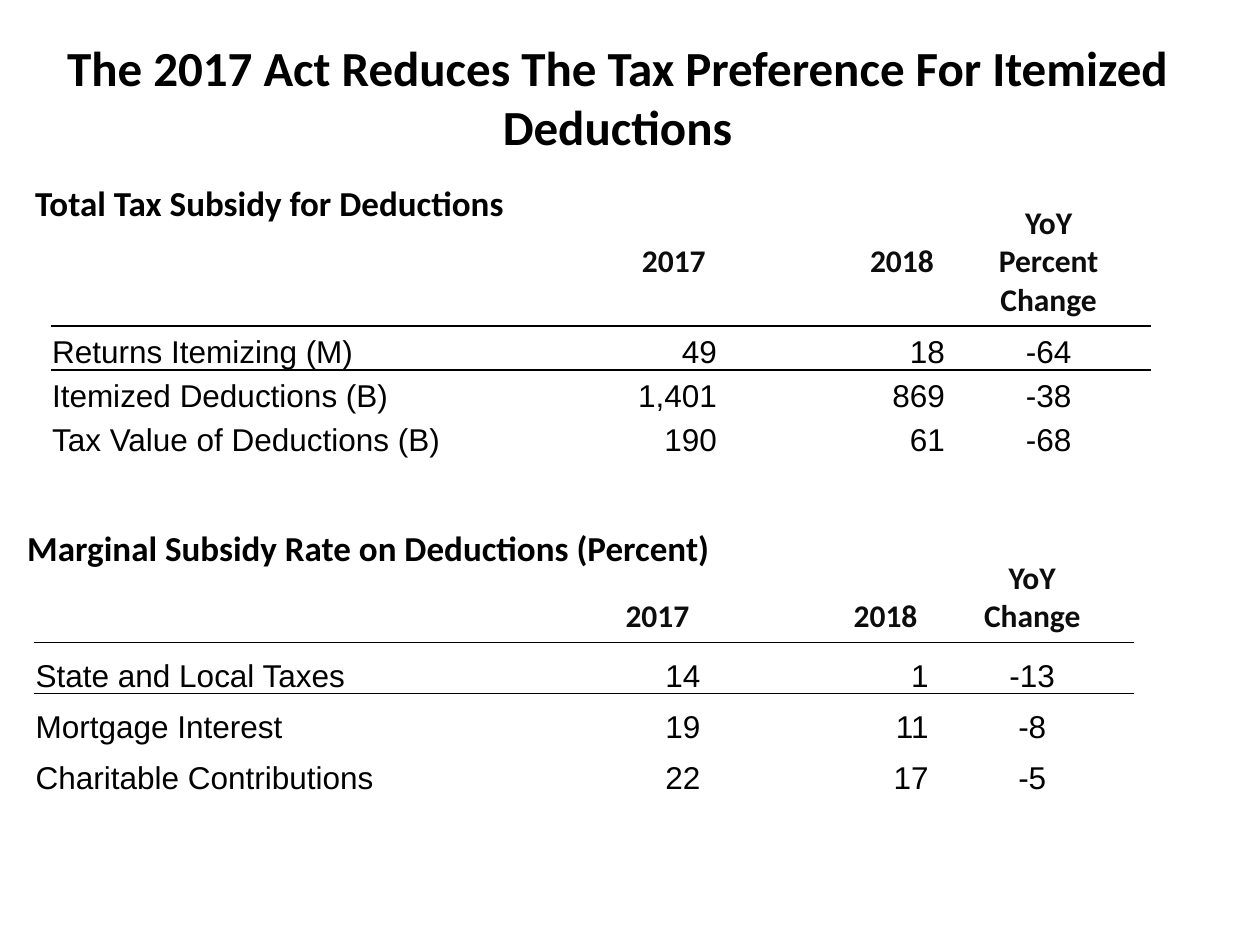
"""Build a slide with two tables on the tax preference for itemized deductions."""
from dataclasses import dataclass

from lxml.etree import SubElement, Element
from pptx import Presentation
from pptx.dml.color import RGBColor
from pptx.enum.text import MSO_ANCHOR as ANCHOR, MSO_AUTO_SIZE as AUTOSIZE, PP_ALIGN as ALIGN
from pptx.oxml.ns import qn
from pptx.util import Cm, Pt


@dataclass(frozen=True)
class Theme:
    heading_font: str = "Calibri"
    body_font: str = "Arial"
    text: str = "000000"
    header: str = "0D0D0D"
    white: str = "FFFFFF"
    title_size: int = 28
    heading_size: int = 20
    table_size: int = 18
    rule_width: int = 1


THEME = Theme()
NO_GRID_STYLE = "{2D5ABB26-0587-4C30-8999-92F81FD0307C}"
COLUMN_WIDTHS = (8.48, 4.98, 4.6, 4.12)
COLUMN_ALIGNS = (ALIGN.LEFT, ALIGN.RIGHT, ALIGN.RIGHT, ALIGN.CENTER)

SUBSIDY_ROWS = (
    ("Returns Itemizing (M)", "49", "18", "-64"),
    ("Itemized Deductions (B)", "1,401", "869", "-38"),
    ("Tax Value of Deductions (B)", "190", "61", "-68"),
)
RATE_ROWS = (
    ("State and Local Taxes", "14", "1", "-13"),
    ("Mortgage Interest", "19", "11", "-8"),
    ("Charitable Contributions", "22", "17", "-5"),
)


def write(tf, text, size, align=ALIGN.LEFT, font=THEME.heading_font, color=THEME.text, bold=True):
    """Write each line of text as one formatted paragraph."""
    for i, line in enumerate(text.split("\n")):
        p = tf.add_paragraph() if i else tf.paragraphs[0]
        p.alignment = align
        r = p.add_run()
        r.text = line
        r.font.name, r.font.size, r.font.bold = font, Pt(size), bold
        r.font.color.rgb = RGBColor.from_string(color)


def set_title(s, text):
    """Place and format the title placeholder."""
    sp = s.shapes.title
    sp.left, sp.top, sp.width, sp.height = Cm(0), Cm(0), Cm(25.4), Cm(3.39)
    tf = sp.text_frame
    tf.word_wrap, tf.auto_size = True, AUTOSIZE.NONE
    tf.vertical_anchor = ANCHOR.MIDDLE
    tf.margin_left, tf.margin_top = Cm(0.76), Cm(0.76)
    tf.margin_right, tf.margin_bottom = Cm(1.27), Cm(0.25)
    write(tf, text, THEME.title_size, ALIGN.CENTER)


def add_heading(s, left, top, text):
    """Add the heading above a table."""
    tf = s.shapes.add_textbox(Cm(left), Cm(top), Cm(19.38), Cm(1.11)).text_frame
    tf.word_wrap, tf.auto_size = True, AUTOSIZE.SHAPE_TO_FIT_TEXT
    write(tf, text, THEME.heading_size)


def add_rule(cell, side):
    """Draw a border on one side of a cell, lnT or lnB."""
    ln = Element(qn(f"a:{side}"), w=str(Pt(THEME.rule_width)))
    fill = SubElement(ln, qn("a:solidFill"))
    SubElement(fill, qn("a:srgbClr"), val=THEME.text)
    cell._tc.get_or_add_tcPr().insert(0, ln)


def format_header(cell, text, align, anchor):
    """Fill a header cell and underline it."""
    cell.fill.background()
    cell.vertical_anchor = anchor
    if text:
        write(cell.text_frame, text, THEME.table_size, align, color=THEME.header)
    add_rule(cell, "lnB")


def format_body(cell, text, align):
    """Fill a body cell with tight margins."""
    cell.fill.background()
    cell.vertical_anchor = ANCHOR.BOTTOM
    cell.margin_left = cell.margin_right = cell.margin_top = Cm(0.03)
    cell.margin_bottom = Cm(0)
    write(cell.text_frame, text, THEME.table_size, align, THEME.body_font, bold=False)


def add_data_table(s, left, top, header_height, row_height, change_label, year_anchor, rows):
    """Add a table with a year-on-year change column."""
    heights = [header_height] + [row_height] * len(rows)
    table = s.shapes.add_table(len(heights), len(COLUMN_WIDTHS), Cm(left), Cm(top),
                               Cm(sum(COLUMN_WIDTHS)), Cm(sum(heights))).table
    table.first_row = table.horz_banding = False
    table._tbl.tblPr.find(qn("a:tableStyleId")).text = NO_GRID_STYLE
    for column, width in zip(table.columns, COLUMN_WIDTHS):
        column.width = Cm(width)
    for row, height in zip(table.rows, heights):
        row.height = Cm(height)

    headers = ("", "2017", "2018", change_label)
    anchors = (ANCHOR.TOP, year_anchor, year_anchor, ANCHOR.TOP)
    for c, align in enumerate(COLUMN_ALIGNS):
        format_header(table.cell(0, c), headers[c], align, anchors[c])
        for i, values in enumerate(rows, start=1):
            format_body(table.cell(i, c), values[c], align)
        add_rule(table.cell(1, c), "lnT")
        last = table.cell(len(rows), c)
        last.fill.solid()
        last.fill.fore_color.rgb = RGBColor.from_string(THEME.white)


def main():
    """Build and save the slide."""
    prs = Presentation()
    prs.slide_width, prs.slide_height = Cm(25.4), Cm(19.05)
    s = prs.slides.add_slide(prs.slide_layouts[5])
    set_title(s, "The 2017 Act Reduces The Tax Preference For Itemized Deductions")
    add_data_table(s, 1.02, 3.99, 2.58, 0.89, "YoY\nPercent Change", ANCHOR.MIDDLE, SUBSIDY_ROWS)
    add_data_table(s, 0.69, 11.15, 1.79, 1.03, "YoY\nChange", ANCHOR.BOTTOM, RATE_ROWS)
    add_heading(s, 0.3, 10.49, "Marginal Subsidy Rate on Deductions (Percent)")
    add_heading(s, 0.46, 3.53, "Total Tax Subsidy for Deductions")
    prs.save("out.pptx")


if __name__ == "__main__":
    main()
